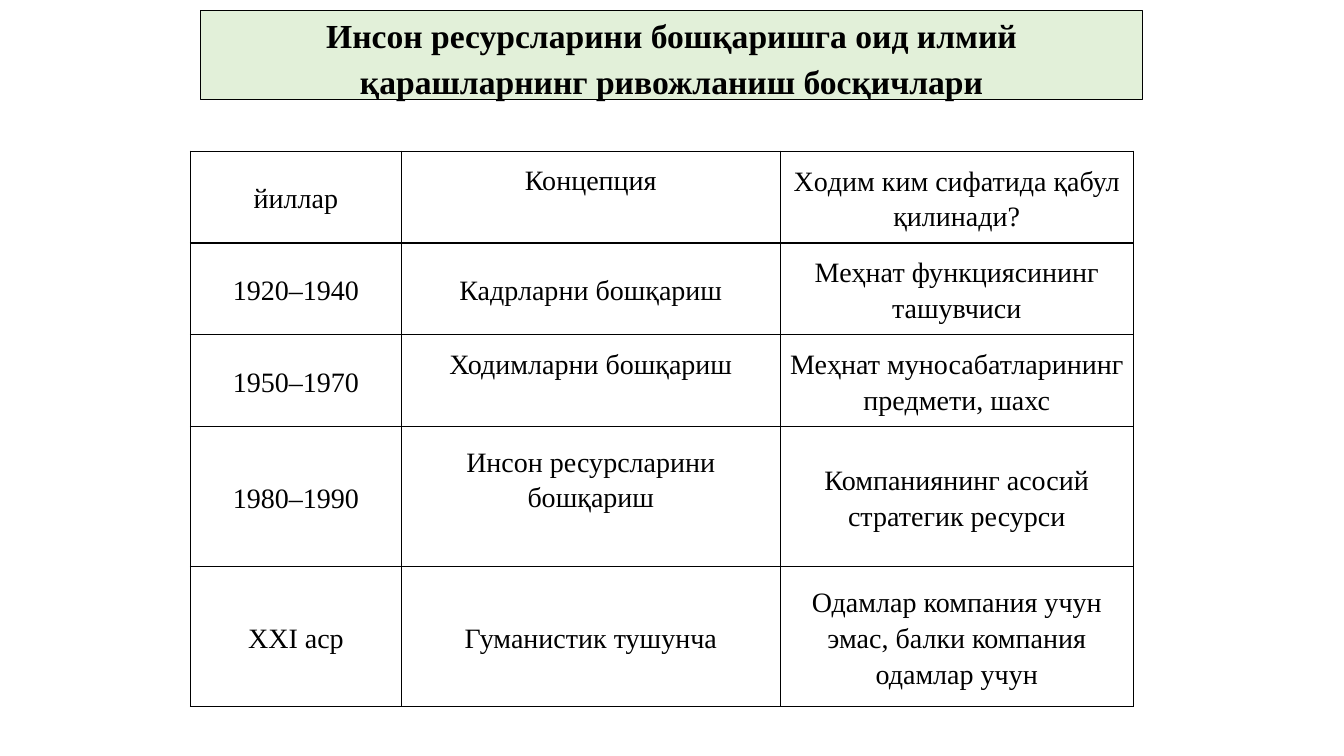
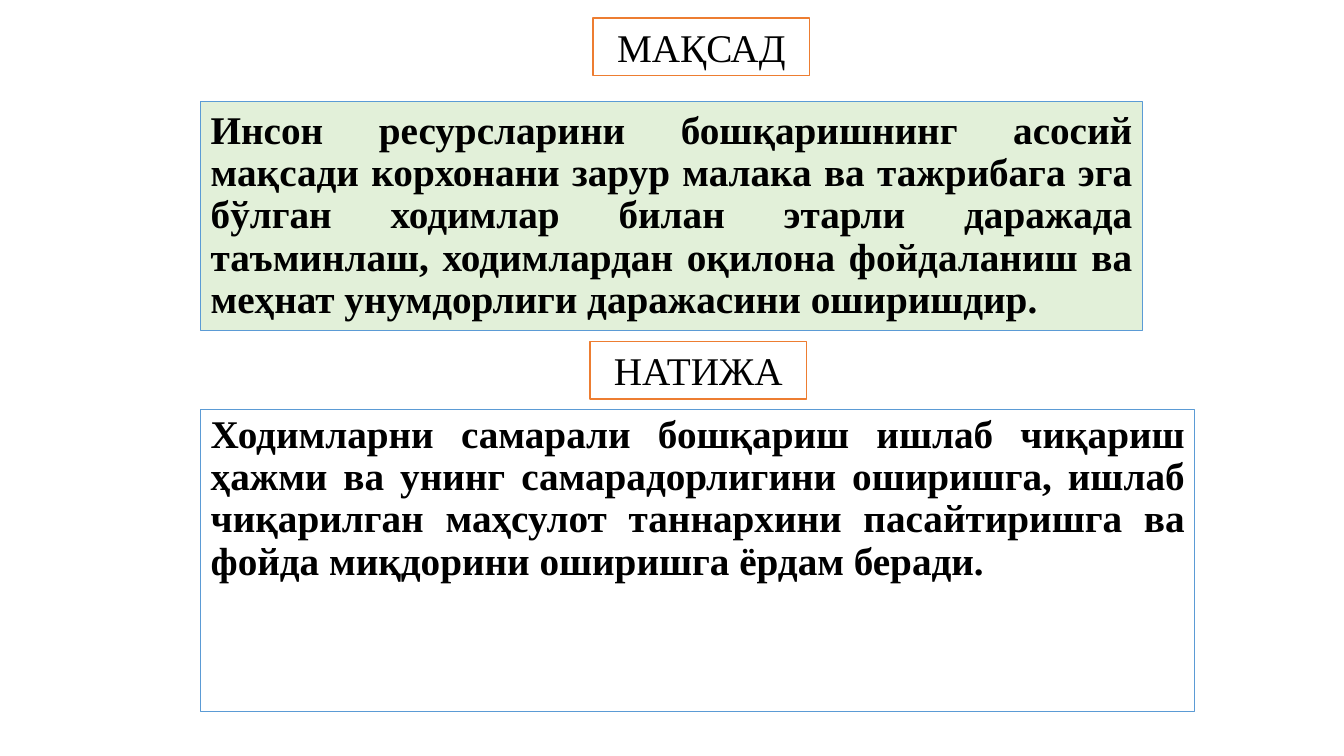
import pptx
import pptx.util
import pptx.dml.color
import pptx.enum.shapes
import pptx.enum.text
import pptx.oxml.ns
import lxml.etree

Inches = pptx.util.Inches
Pt = pptx.util.Pt
ALIGN = pptx.enum.text.PP_ALIGN
ANCHOR = pptx.enum.text.MSO_ANCHOR
FONT = "Times New Roman"
BLACK, WHITE, GREEN = "000000", "FFFFFF", "E2F0D9"
BLUE, ORANGE = "5B9BD5", "ED7D31"
LEFT, WIDTH = 1.99, 9.34

HEAD = "Инсон ресурсларини бошқаришга оид илмий қарашларнинг ривожланиш босқичлари"
COLS = [2.09, 3.76, 3.5]
HIGHS = [0.91, 0.91, 0.91, 1.39, 1.39]
ROWS = [
    ["йиллар", "Концепция", "Xoдим ким сифатида қабул қилинади?"],
    ["1920–1940", "Кадрларни бошқариш", "Меҳнат функциясининг ташувчиси"],
    ["1950–1970", "Ходимларни бошқариш", "Меҳнат муносабатларининг предмети, шахс"],
    ["1980–1990", "Инсон ресурсларини бошқариш", "Компаниянинг асосий стратегик ресурси"],
    ["XXI аср", "Гуманистик тушунча", "Одамлар компания учун эмас, балки компания одамлар учун"],
]
RAISED = [(0, 1), (2, 1), (3, 1)]
GOAL = ("Инсон ресурсларини бошқаришнинг асосий мақсади корхонани зарур малака ва тажрибага эга "
        "бўлган ходимлар билан этарли даражада таъминлаш, ходимлардан оқилона фойдаланиш ва "
        "меҳнат унумдорлиги даражасини оширишдир.")
RESULT = ("Ходимларни самарали бошқариш ишлаб чиқариш ҳажми ва унинг самарадорлигини оширишга, "
          "ишлаб чиқарилган маҳсулот таннархини пасайтиришга ва фойда миқдорини оширишга ёрдам беради.")


def paint(form, color):
    form.solid()
    form.fore_color.rgb = pptx.dml.color.RGBColor.from_string(color)


def write(frame, text, size, align, space, bold=False):
    para = frame.paragraphs[0]
    para.alignment = align
    para.line_spacing = space
    para.space_before = Pt(0)
    run = para.add_run()
    run.text = text
    run.font.name = FONT
    run.font.size = Pt(size)
    run.font.bold = bold
    paint(run.font.fill, BLACK)


def frame_box(shape, box, fill, line, width):
    shape.left, shape.top, shape.width, shape.height = map(Inches, box)
    paint(shape.fill, fill)
    paint(shape.line.fill, line)
    shape.line.width = Pt(width)
    frame = shape.text_frame
    frame.word_wrap = True
    frame.auto_size = pptx.enum.text.MSO_AUTO_SIZE.NONE
    return frame


def add_title(slide, box, text, size, align, space, line):
    frame = frame_box(slide.shapes.title, box, GREEN, line, 0.75)
    frame.vertical_anchor = ANCHOR.MIDDLE
    write(frame, text, size, align, space, True)


def add_body(slide, box, text):
    frame = frame_box(slide.placeholders[1], box, WHITE, BLUE, 1)
    frame.vertical_anchor = ANCHOR.TOP
    props = frame.paragraphs[0]._p.get_or_add_pPr()
    props.set("marL", "0")
    props.set("indent", "0")
    lxml.etree.SubElement(props, pptx.oxml.ns.qn("a:buNone"))
    write(frame, text, 28, ALIGN.JUSTIFY, 0.9, True)


def add_label(slide, box, text):
    shape = slide.shapes.add_shape(pptx.enum.shapes.MSO_SHAPE.RECTANGLE, *map(Inches, box))
    shape.shadow.inherit = False
    frame = frame_box(shape, box, WHITE, ORANGE, 1)
    frame.vertical_anchor = ANCHOR.TOP
    write(frame, text, 28, ALIGN.CENTER, 1.0)


def add_edges(cell):
    props = cell._tc.get_or_add_tcPr()
    for side in "LRTB":
        edge = lxml.etree.SubElement(props, pptx.oxml.ns.qn("a:ln" + side), w=str(Pt(1)))
        fill = lxml.etree.SubElement(edge, pptx.oxml.ns.qn("a:solidFill"))
        lxml.etree.SubElement(fill, pptx.oxml.ns.qn("a:srgbClr"), val=BLACK)


def add_grid(slide, left, top):
    box = (left, top, sum(COLS), sum(HIGHS))
    table = slide.shapes.add_table(len(ROWS), len(COLS), *map(Inches, box)).table
    table.first_row = table.horz_banding = False
    for col, width in zip(table.columns, COLS):
        col.width = Inches(width)
    for i, (row, high) in enumerate(zip(table.rows, HIGHS)):
        row.height = Inches(high)
        for j, cell in enumerate(row.cells):
            add_edges(cell)
            paint(cell.fill, WHITE)
            cell.vertical_anchor = ANCHOR.MIDDLE
            cell.margin_left = cell.margin_right = Inches(0.07)
            cell.margin_top = 0
            cell.margin_bottom = Inches(0.36 if (i, j) in RAISED else 0)
            write(cell.text_frame, ROWS[i][j], 20, ALIGN.CENTER, 1.15)


def add_stages(deck):
    slide = deck.slides.add_slide(deck.slide_layouts[5])
    add_title(slide, (LEFT, 0.1, WIDTH, 0.89), HEAD, 24, ALIGN.CENTER, 1.15, BLACK)
    add_grid(slide, 1.89, 1.5)


def add_goals(deck):
    slide = deck.slides.add_slide(deck.slide_layouts[1])
    add_title(slide, (LEFT, 1.01, WIDTH, 2.27), GOAL, 28, ALIGN.JUSTIFY, 0.9, BLUE)
    add_body(slide, (LEFT, 4.06, 9.86, 3), RESULT)
    for left, top, text in [(5.88, 0.18, "МАҚСАД"), (5.85, 3.39, "НАТИЖА")]:
        add_label(slide, (left, top, 2.15, 0.57), text)


def main():
    deck = pptx.Presentation()
    deck.slide_width = Inches(13.33)
    deck.slide_height = Inches(7.5)
    add_stages(deck)
    add_goals(deck)
    deck.save("out.pptx")


if __name__ == "__main__":
    main()
